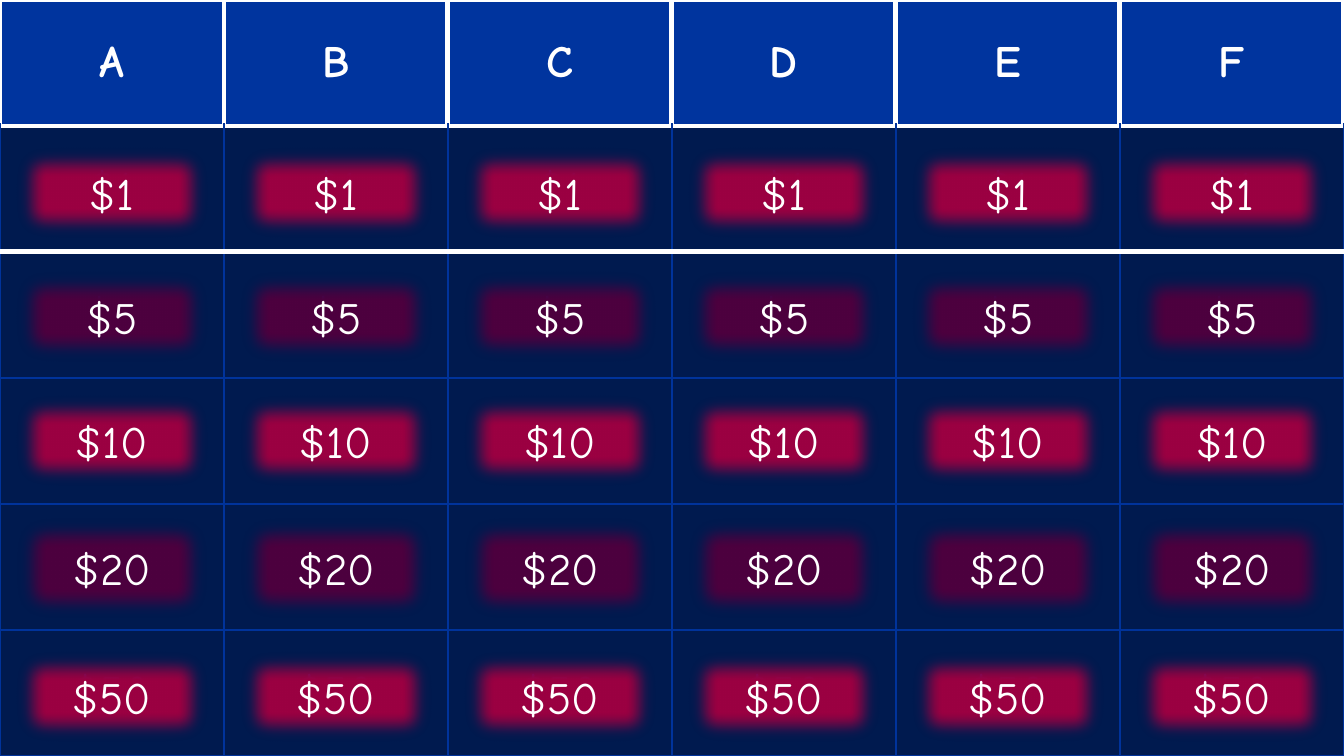
from lxml import etree
from pptx import Presentation
from pptx.dml.color import RGBColor
from pptx.enum.shapes import MSO_SHAPE
from pptx.enum.text import MSO_ANCHOR, PP_ALIGN
from pptx.oxml.ns import qn
from pptx.util import Emu, Pt

RECTANGLE = MSO_SHAPE.RECTANGLE
MIDDLE = MSO_ANCHOR.MIDDLE
CENTER = PP_ALIGN.CENTER

EMU_PER_PX = 9144000 / 1344
COLUMN_WIDTH, ROW_HEIGHT = 224, 126
BUTTON_LEFT, BUTTON_WIDTH = 11, 202
SOFT_EDGE = 19
FONT = "Comic Neue"
WHITE, BLUE, NAVY, GRID = "FFFFFF", "00349E", "001A4F", "00339B"
NO_STYLE = "{2D5ABB26-0587-4C30-8999-92F81FD0307C}"
THICK, THIN = (WHITE, 3), (GRID, 0.75)

CATEGORIES = "ABCDEF"
PRIZES = [
    ("$1", 142, 101, "9C0042", "BD2968"),
    ("$5", 266, 101, "4E003F", "A90042"),
    ("$10", 390, 101, "9C0042", "73005E"),
    ("$20", 512, 112, "4E003F", "4D005E"),
    ("$50", 646, 101, "9C0042", "BD2968"),
]


def px(value):
    return Emu(round(value * EMU_PER_PX))


def rgb(value):
    return RGBColor.from_string(value)


def write_text(text_frame, text, color, bold=False):
    paragraph = text_frame.paragraphs[0]
    paragraph.text = text
    paragraph.alignment = CENTER
    paragraph.font.name = FONT
    paragraph.font.size = Pt(24)
    paragraph.font.bold = bold
    paragraph.font.color.rgb = rgb(color)


def set_borders(cell, borders):
    properties = cell._tc.get_or_add_tcPr()
    for side in "LRTB":
        if side not in borders:
            continue
        color, width = borders[side]
        line = etree.SubElement(properties, qn(f"a:ln{side}"), w=str(Pt(width)))
        fill = etree.SubElement(line, qn("a:solidFill"))
        etree.SubElement(fill, qn("a:srgbClr"), val=color)


def row_borders(row):
    if row == 0:
        return dict.fromkeys("LRTB", THICK)
    borders = dict.fromkeys("LRTB", THIN)
    if row == 1:
        borders.update(T=THICK, B=THICK)
    elif row == 2:
        del borders["T"]
    return borders


def add_board(slide):
    rows, columns = len(PRIZES) + 1, len(CATEGORIES)
    frame = slide.shapes.add_table(
        rows, columns, 0, 0, px(columns * COLUMN_WIDTH), px(rows * ROW_HEIGHT)
    )
    table = frame.table
    table.first_row = False
    table.horz_banding = False
    table._tbl.tblPr.find(qn("a:tableStyleId")).text = NO_STYLE
    for column in table.columns:
        column.width = px(COLUMN_WIDTH)
    for row_index, row in enumerate(table.rows):
        row.height = px(ROW_HEIGHT)
        header = row_index == 0
        for category, cell in zip(CATEGORIES, row.cells):
            text = category if header else PRIZES[row_index - 1][0]
            write_text(cell.text_frame, text, WHITE if header else BLUE, header)
            cell.vertical_anchor = MIDDLE
            set_borders(cell, row_borders(row_index))
            cell.fill.solid()
            cell.fill.fore_color.rgb = rgb(BLUE if header else NAVY)


def add_button(slide, left, text, top, height, fill, line):
    button = slide.shapes.add_shape(
        RECTANGLE, px(left), px(top), px(BUTTON_WIDTH), px(height)
    )
    button.shadow.inherit = False
    button.fill.solid()
    button.fill.fore_color.rgb = rgb(fill)
    button.line.color.rgb = rgb(line)
    button.line.width = Pt(2)
    effects = button._element.spPr.find(qn("a:effectLst"))
    etree.SubElement(effects, qn("a:softEdge"), rad=str(px(SOFT_EDGE)))
    button.text_frame.word_wrap = True
    button.text_frame.vertical_anchor = MIDDLE
    write_text(button.text_frame, text, WHITE)


def main():
    presentation = Presentation()
    presentation.slide_width = px(1344)
    presentation.slide_height = px(756)
    slide = presentation.slides.add_slide(presentation.slide_layouts[6])
    slide.background.fill.solid()
    slide.background.fill.fore_color.rgb = rgb("000000")
    add_board(slide)
    for column in range(len(CATEGORIES)):
        for prize in PRIZES:
            add_button(slide, BUTTON_LEFT + column * COLUMN_WIDTH, *prize)
    presentation.save("out.pptx")


if __name__ == "__main__":
    main()
